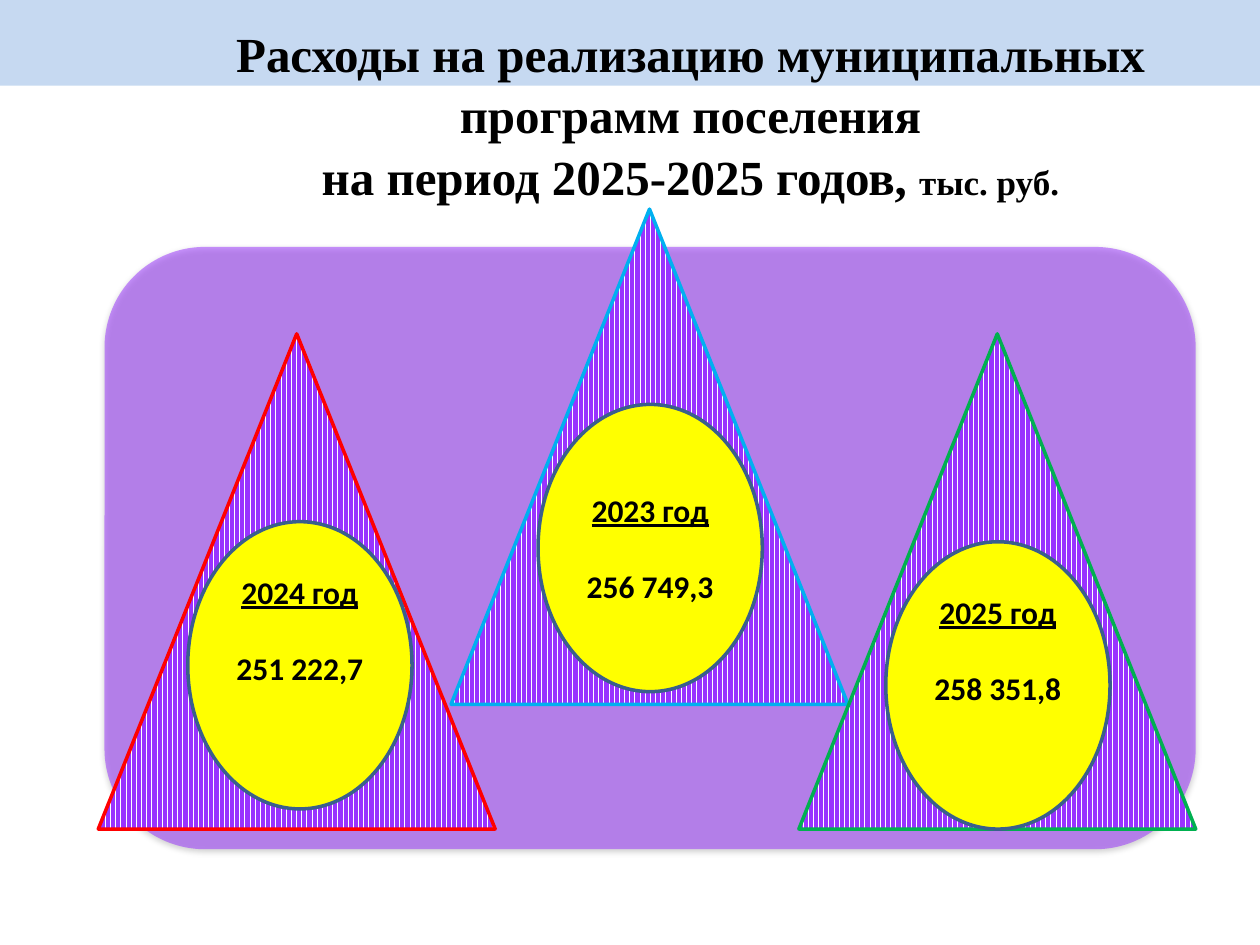
from lxml import etree
from pptx import Presentation
from pptx.dml.color import RGBColor
from pptx.enum.dml import MSO_PATTERN
from pptx.enum.shapes import MSO_SHAPE
from pptx.enum.text import MSO_ANCHOR, PP_ALIGN
from pptx.oxml.ns import qn
from pptx.util import Inches, Pt

RECT, ROUNDED = MSO_SHAPE.RECTANGLE, MSO_SHAPE.ROUNDED_RECTANGLE
TRIANGLE, OVAL = MSO_SHAPE.ISOSCELES_TRIANGLE, MSO_SHAPE.OVAL
STRIPES = MSO_PATTERN.DARK_VERTICAL
TOP, MIDDLE, CENTER = MSO_ANCHOR.TOP, MSO_ANCHOR.MIDDLE, PP_ALIGN.CENTER

VIOLET, YELLOW, BLACK, WHITE = "9933FF", "FFFF00", "000000", "FFFFFF"
TITLE_FONT = {"name": "Times New Roman", "size": Pt(28), "bold": True}
YEAR_FONT = {"name": "Calibri", "size": Pt(18), "bold": True}

# triangle left, top, outline; oval left, top, bottom inset; year, amount
YEARS = [
    (3.58, 1.66, "00B0F0", 4.27, 3.21, 0.05, "2023 год", "256\u00a0749,3"),
    (0.78, 2.65, "FF0000", 1.49, 4.14, 0.61, "2024 год", "251\u00a0222,7"),
    (6.34, 2.65, "00B050", 7.03, 4.3, 0.61, "2025 год", "258\u00a0351,8"),
]


def rgb(value):
    return RGBColor.from_string(value)


def add_run(p, text, **fmt):
    r = p.add_run()
    r.text = text
    for name, value in fmt.items():
        setattr(r.font, name, value)
    r.font.color.rgb = rgb(BLACK)


def add_shape(s, kind, box, fill=None, line=None):
    sp = s.shapes.add_shape(kind, *map(Inches, box))
    sp.shadow.inherit = False
    if fill:
        sp.fill.solid()
        sp.fill.fore_color.rgb = rgb(fill)
    if line:
        sp.line.color.rgb = rgb(line)
        sp.line.width = Pt(2)
    else:
        sp.line.fill.background()
    return sp


def add_title(s, box):
    sp = s.shapes.title
    sp.left, sp.top, sp.width, sp.height = map(Inches, box)
    tf = sp.text_frame
    tf.word_wrap = True
    tf.vertical_anchor = TOP
    first, second = tf.paragraphs[0], tf.add_paragraph()
    for p in (first, second):
        p.alignment = CENTER
        p.line_spacing = 1.05
        p.space_before = Pt(0)
    add_run(first, "Расходы на реализацию муниципальных программ поселения", **TITLE_FONT)
    add_run(second, "на период 2025-2025 годов, ", **TITLE_FONT)
    add_run(second, "тыс. руб.", **{**TITLE_FONT, "size": Pt(20)})
    return sp


def add_panel(s, box):
    """Translucent rounded panel with a soft shadow below it."""
    sp = add_shape(s, ROUNDED, box, VIOLET)
    color = sp.element.spPr.find(qn("a:solidFill"))[0]
    etree.SubElement(color, qn("a:alpha"), val="52000")
    effects = sp.element.spPr.find(qn("a:effectLst"))
    shadow = etree.SubElement(effects, qn("a:outerShdw"), blurRad=str(Pt(3.1)),
                              dist=str(Pt(1.8)), dir="5400000", rotWithShape="0")
    black = etree.SubElement(shadow, qn("a:srgbClr"), val=BLACK)
    etree.SubElement(black, qn("a:alpha"), val="35000")


def add_triangle(s, box, line):
    sp = add_shape(s, TRIANGLE, box, line=line)
    sp.fill.patterned()
    sp.fill.pattern = STRIPES
    sp.fill.fore_color.rgb = rgb(VIOLET)
    sp.fill.back_color.rgb = rgb(WHITE)


def add_amount(s, box, bottom, year, amount):
    tf = add_shape(s, OVAL, box, YELLOW, "3A5F8C").text_frame
    tf.word_wrap = True
    tf.vertical_anchor = MIDDLE
    tf.margin_bottom = Inches(bottom)
    first, second = tf.paragraphs[0], tf.add_paragraph()
    first.alignment = second.alignment = CENTER
    second.space_before = Pt(22)
    add_run(first, year, underline=True, **YEAR_FONT)
    add_run(second, amount, **YEAR_FONT)


def main():
    prs = Presentation()
    prs.slide_width, prs.slide_height = Inches(10), Inches(7.5)
    s = prs.slides.add_slide(prs.slide_layouts[5])
    band = add_shape(s, RECT, (0, 0, 10, 0.68), "C6D9F1")
    title = add_title(s, (1.15, 0.11, 8.66, 1.51))
    band.element.addnext(title.element)
    add_panel(s, (0.83, 1.96, 8.66, 4.78))
    for left, top, line, *_ in YEARS:
        add_triangle(s, (left, top, 3.15, 3.93), line)
    for *_, left, top, bottom, year, amount in YEARS:
        add_amount(s, (left, top, 1.78, 2.28), bottom, year, amount)
    prs.save("out.pptx")


if __name__ == "__main__":
    main()
